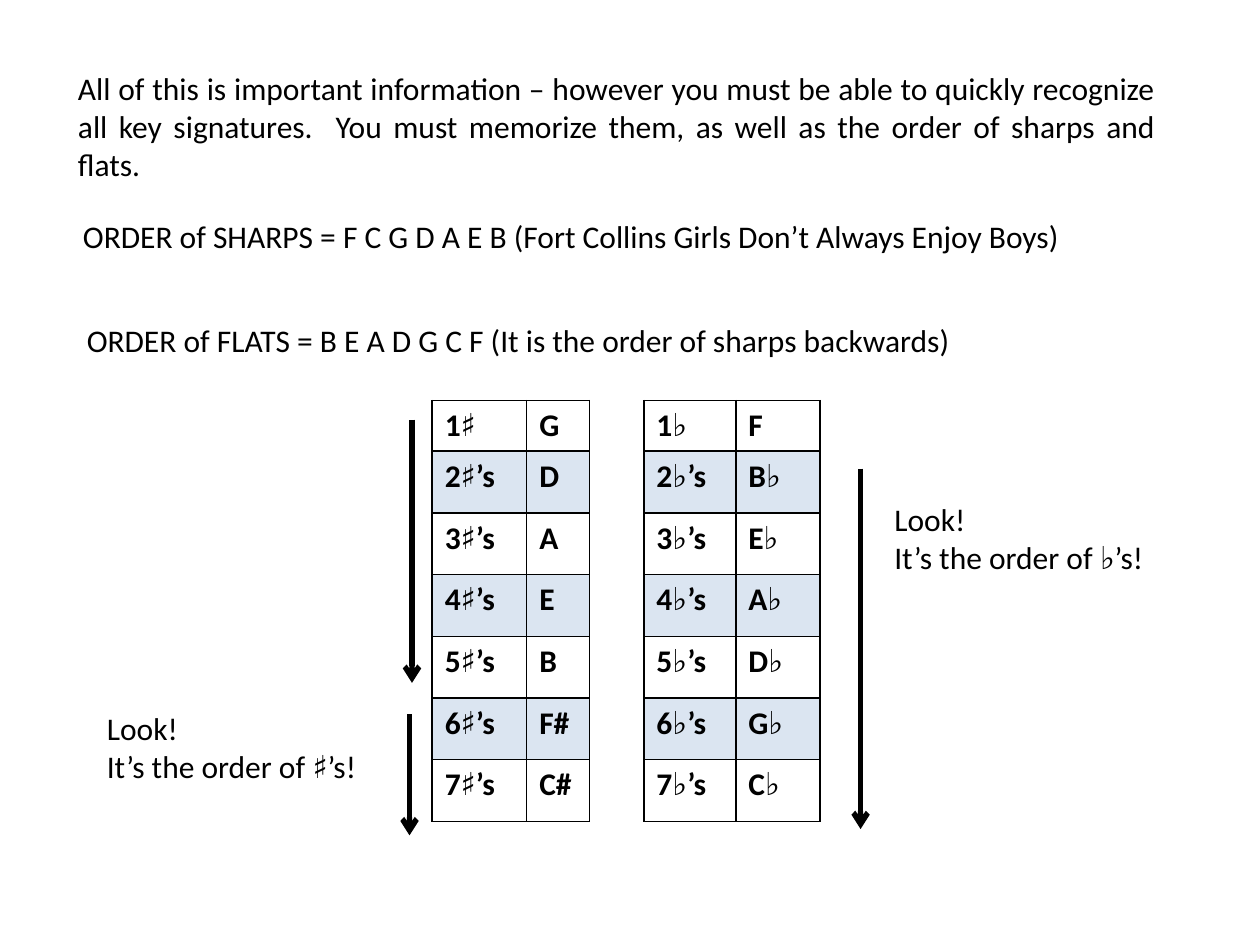
from lxml import etree
from pptx import Presentation
from pptx.dml.color import RGBColor
from pptx.enum.shapes import MSO_CONNECTOR
from pptx.enum.text import MSO_AUTO_SIZE, PP_ALIGN
from pptx.oxml.ns import qn
from pptx.util import Inches, Pt

STRAIGHT = MSO_CONNECTOR.STRAIGHT
LEFT, JUSTIFY = PP_ALIGN.LEFT, PP_ALIGN.JUSTIFY
COLORS = {"ink": "000000", "band": "4F81BD"}
BAND_ALPHA = "20000"
FONT = "Calibri"

SHARP_KEYS = ["G", "D", "A", "E", "B", "F#", "C#"]
FLAT_KEYS = ["F", "B♭", "E♭", "A♭", "D♭", "G♭", "C♭"]
COLUMN_WIDTHS = [0.75, 0.5, 0.43, 0.73, 0.67]
ROW_HEIGHTS = [0.39] + [0.49] * 6
GAP_COLUMN = 2


def color(name):
    return RGBColor.from_string(COLORS[name])


def format_text(text_frame, bold=False, alignment=LEFT):
    for paragraph in text_frame.paragraphs:
        paragraph.alignment = alignment
        for run in paragraph.runs:
            run.font.name = FONT
            run.font.size = Pt(18)
            run.font.bold = bold
            run.font.color.rgb = color("ink")


def add_text(slide, text, left, top, width, height, alignment=LEFT):
    box = slide.shapes.add_textbox(Inches(left), Inches(top), Inches(width), Inches(height))
    text_frame = box.text_frame
    text_frame.word_wrap = True
    text_frame.auto_size = MSO_AUTO_SIZE.SHAPE_TO_FIT_TEXT
    text_frame.text = text
    format_text(text_frame, alignment=alignment)


def add_down_arrow(slide, x, top, bottom):
    arrow = slide.shapes.add_connector(
        STRAIGHT, Inches(x), Inches(top), Inches(x), Inches(bottom))
    arrow.line.color.rgb = color("ink")
    arrow.line.width = Pt(3)
    etree.SubElement(arrow.line._get_or_add_ln(), qn("a:tailEnd"), type="arrow")
    etree.SubElement(arrow._element.spPr, qn("a:effectLst"))


def set_borders(cell, visible_sides):
    properties = cell._tc.get_or_add_tcPr()
    for side in "LRTB":
        line = etree.SubElement(properties, qn(f"a:ln{side}"), w=str(Pt(1)))
        if side in visible_sides:
            fill = etree.SubElement(line, qn("a:solidFill"))
            etree.SubElement(fill, qn("a:srgbClr"), val=COLORS["ink"])
        else:
            etree.SubElement(line, qn("a:noFill"))


def fill_cell(cell, banded):
    if not banded:
        cell.fill.background()
        return
    cell.fill.solid()
    cell.fill.fore_color.rgb = color("band")
    band_color = next(cell._tc.tcPr.iter(qn("a:srgbClr"), qn("a:solidFill")))
    for band_color in cell._tc.tcPr.find(qn("a:solidFill")):
        etree.SubElement(band_color, qn("a:alpha"), val=BAND_ALPHA)


def add_key_table(slide, left, top):
    """Number of sharps or flats beside each key, with an open column between."""
    table = slide.shapes.add_table(
        len(ROW_HEIGHTS), len(COLUMN_WIDTHS), Inches(left), Inches(top),
        Inches(sum(COLUMN_WIDTHS)), Inches(sum(ROW_HEIGHTS))).table
    table.first_row = False
    table.horz_banding = False
    for column, width in zip(table.columns, COLUMN_WIDTHS):
        column.width = Inches(width)
    for row, height in zip(table.rows, ROW_HEIGHTS):
        row.height = Inches(height)

    for row_index, (sharp_key, flat_key) in enumerate(zip(SHARP_KEYS, FLAT_KEYS)):
        suffix = "’s" if row_index else ""
        count = row_index + 1
        texts = [f"{count}♯{suffix}", sharp_key, "", f"{count}♭{suffix}", flat_key]
        for column_index, text in enumerate(texts):
            cell = table.cell(row_index, column_index)
            is_gap = column_index == GAP_COLUMN
            cell.text_frame.text = text
            format_text(cell.text_frame, bold=True)
            set_borders(cell, "LR" if is_gap else "LRTB")
            fill_cell(cell, banded=row_index % 2 == 1 and not is_gap)


def add_introduction(slide, left, top, width):
    add_text(slide, "All of this is important information – however you must be able to "
             "quickly recognize all key signatures.  You must memorize them, as well as "
             "the order of sharps and flats.", left, top, width, 1.01, JUSTIFY)
    add_text(slide, "ORDER of SHARPS = F C G D A E B (Fort Collins Girls Don’t Always "
             "Enjoy Boys)", left + 0.04, top + 1.17, width, 0.4)
    add_text(slide, "ORDER of FLATS = B E A D G C F (It is the order of sharps backwards)",
             left + 0.07, top + 2, width, 0.4)


def add_order_note(slide, symbol, left, top):
    add_text(slide, f"Look!\nIt’s the order of {symbol}’s!", left, top, 2.34, 0.71)


def main():
    presentation = Presentation()
    presentation.slide_width, presentation.slide_height = Inches(10), Inches(7.5)
    slide = presentation.slides.add_slide(presentation.slide_layouts[6])
    add_introduction(slide, 0.52, 0.5, 8.75)
    add_key_table(slide, 3.43, 3.18)
    add_order_note(slide, "♭", 7, 3.92)
    add_order_note(slide, "♯", 0.75, 5.58)
    for x, top, bottom in [(6.83, 3.72, 6.58), (3.25, 5.67, 6.63), (3.27, 3.33, 5.42)]:
        add_down_arrow(slide, x, top, bottom)
    presentation.save("out.pptx")


if __name__ == "__main__":
    main()
